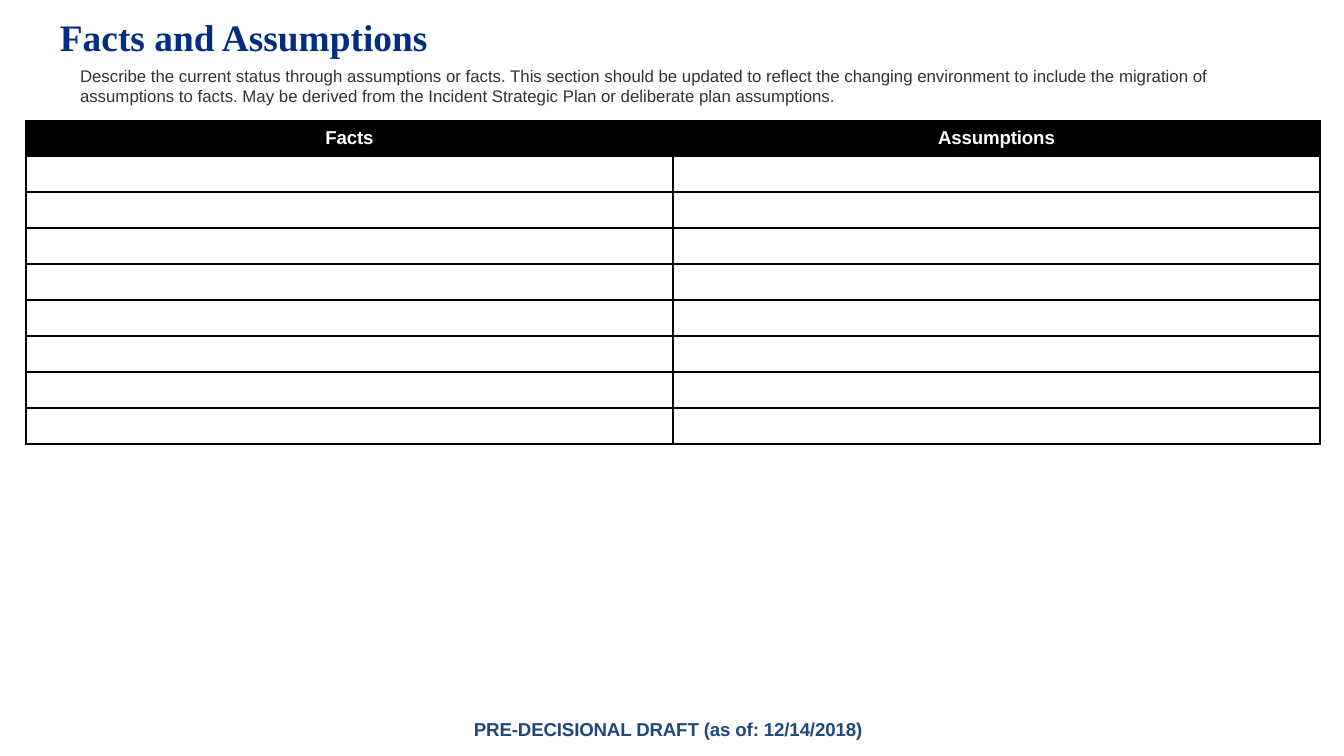
from lxml import etree
from pptx import Presentation
from pptx import util as u
from pptx.dml.color import RGBColor
from pptx.enum import text
from pptx.oxml import ns

SCALE = 914400 / 134.4  # EMU in one px
NAVY = RGBColor(0x00, 0x2E, 0x80)
BLUE = RGBColor(0x1F, 0x48, 0x7C)
GRAY = RGBColor(0x33, 0x33, 0x33)
BLACK = RGBColor(0x00, 0x00, 0x00)
WHITE = RGBColor(0xFF, 0xFF, 0xFF)

TITLE = dict(name="Times New Roman", size=u.Pt(20), bold=True, color=NAVY)
BODY = dict(name="Arial", size=u.Pt(9), bold=False, color=GRAY)
HEAD = dict(name="Arial", size=u.Pt(10), bold=True, color=WHITE)
FOOT = dict(name="Arial", size=u.Pt(10), bold=True, color=BLUE)

HEADS = ["Facts", "Assumptions"]
ROWS = 8
COL_W, HEAD_H, ROW_H = 647, 35, 36
GUIDE = [
    "Describe the current status through assumptions or facts. This section should be "
    "updated to reflect the changing environment to include the migration of",
    "assumptions to facts. May be derived from the Incident Strategic Plan or "
    "deliberate plan assumptions.",
]


def px(n):
    return u.Emu(round(n * SCALE))


def style(run, look, track=0):
    for key, val in look.items():
        if key == "color":
            run.font.color.rgb = val
        else:
            setattr(run.font, key, val)
    if track:
        run.font._element.set("spc", str(track))


def inset(item, left=0, top=0):
    sides = dict(margin_left=left, margin_top=top, margin_right=0, margin_bottom=0)
    for key, val in sides.items():
        setattr(item, key, px(val))


def add_text(slide, box, lines, look, left=1, top=1, track=0):
    frame = slide.shapes.add_textbox(*map(px, box)).text_frame
    frame.word_wrap = True
    inset(frame, left, top)
    for i, line in enumerate(lines):
        para = frame.paragraphs[0] if i == 0 else frame.add_paragraph()
        run = para.add_run()
        run.text = line
        style(run, look, track)


def add_edges(cell):
    props = cell._tc.get_or_add_tcPr()
    for side in ("lnL", "lnR", "lnT", "lnB"):
        line = etree.SubElement(props, ns.qn("a:" + side), w=str(u.Pt(1)))
        fill = etree.SubElement(line, ns.qn("a:solidFill"))
        etree.SubElement(fill, ns.qn("a:srgbClr"), val=str(BLACK))


def add_head(cell, label):
    inset(cell, top=7)
    cell.fill.solid()
    cell.fill.fore_color.rgb = BLACK
    para = cell.text_frame.paragraphs[0]
    para.alignment = text.PP_ALIGN.CENTER
    run = para.add_run()
    run.text = label
    style(run, HEAD, -5)


def add_blank(cell):
    inset(cell)
    cell.fill.background()
    # A small font size keeps the empty row at its set height
    para = cell.text_frame.paragraphs[0]._p
    etree.SubElement(para, ns.qn("a:endParaRPr"), sz="900")


def add_grid(slide, left, top):
    size = (COL_W * len(HEADS), HEAD_H + ROW_H * ROWS)
    grid = slide.shapes.add_table(
        ROWS + 1, len(HEADS), *map(px, (left, top, *size))).table
    grid.first_row = grid.horz_banding = False
    for col in grid.columns:
        col.width = px(COL_W)
    for r, row in enumerate(grid.rows):
        row.height = px(ROW_H if r else HEAD_H)
        for cell, label in zip(row.cells, HEADS):
            add_edges(cell)
            if r:
                add_blank(cell)
            else:
                add_head(cell, label)


def main():
    deck = Presentation()
    deck.slide_width, deck.slide_height = px(1344), px(756)
    slide = deck.slides.add_slide(deck.slide_layouts[6])

    # Title and guidance
    add_text(slide, (58, 13, 380, 48), ["Facts and Assumptions"], TITLE, left=2)
    add_text(slide, (79, 65, 1136, 44), GUIDE, BODY)

    # Facts and assumptions table
    add_grid(slide, 26, 121)

    # Draft notice
    add_text(slide, (473, 718, 400, 24),
             ["PRE-DECISIONAL DRAFT (as of: 12/14/2018)"], FOOT, top=0, track=-5)

    deck.save("out.pptx")


if __name__ == "__main__":
    main()
